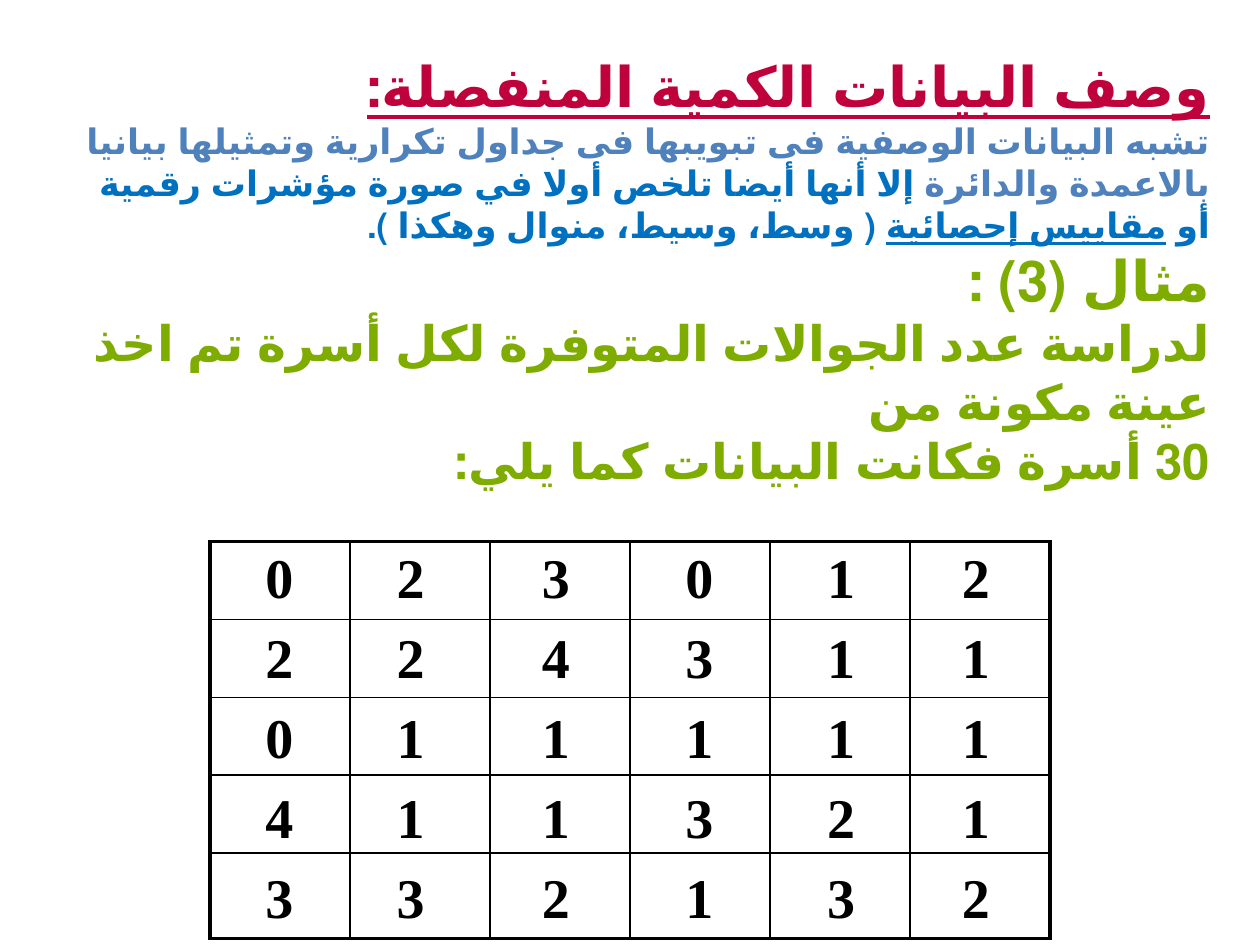
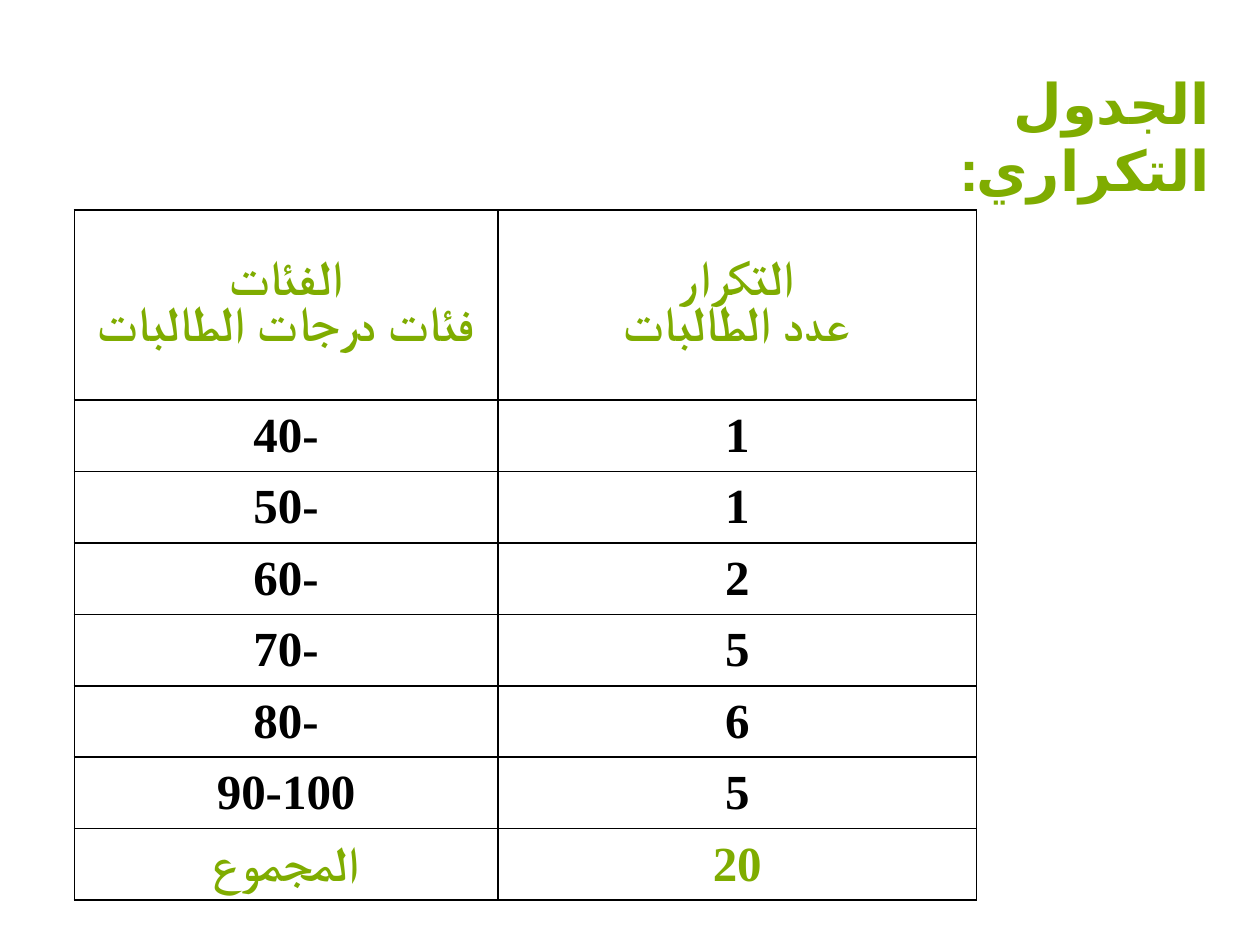
from lxml.etree import SubElement
from pptx import Presentation
from pptx.dml.color import RGBColor
from pptx.enum.lang import MSO_LANGUAGE_ID
from pptx.enum.text import MSO_ANCHOR, MSO_AUTO_SIZE, PP_ALIGN
from pptx.oxml import parse_xml
from pptx.oxml.ns import nsdecls, qn
from pptx.util import Pt

CRIMSON, SLATE, BLUE, GREEN, BLACK = "BF013C", "4F81BD", "0070C0", "7FAC00", "000000"
NO_GRID_STYLE = "{2D5ABB26-0587-4C30-8999-92F81FD0307C}"
THIN, THICK = 1, 2.25


def colour(hex_string):
    return RGBColor.from_string(hex_string)


class Deck:
    """Holds the shared style and the slide being filled."""
    text_font, table_font = "Calibri", "Times New Roman"

    def __init__(self, width, height):
        self.prs = Presentation()
        self.prs.slide_width, self.prs.slide_height = Pt(width), Pt(height)
        self.slide = None

    def new_slide(self):
        self.slide = self.prs.slides.add_slide(self.prs.slide_layouts[6])

    def set_font(self, paragraph, size, fill, name):
        font = paragraph.font
        font.size, font.bold, font.name = Pt(size), True, name
        font.language_id = MSO_LANGUAGE_ID.ARABIC
        if fill:
            font.color.rgb = colour(fill)
        for run in paragraph.runs:
            run.font.language_id = MSO_LANGUAGE_ID.ARABIC

    def arabic_text(self, left, top, width, height, paragraphs):
        """Each paragraph is (size, [(text, colour, underlined), ...])."""
        frame = self.slide.shapes.add_textbox(Pt(left), Pt(top), Pt(width), Pt(height)).text_frame
        frame.word_wrap = True
        frame.auto_size = MSO_AUTO_SIZE.SHAPE_TO_FIT_TEXT
        frame.vertical_anchor = MSO_ANCHOR.MIDDLE
        for i, (size, pieces) in enumerate(paragraphs):
            paragraph = frame.paragraphs[0] if i == 0 else frame.add_paragraph()
            paragraph.alignment = PP_ALIGN.RIGHT
            paragraph._p.get_or_add_pPr().set("rtl", "1")
            shared_fill = pieces[0][1] if len(pieces) == 1 else None
            for text, fill, underlined in pieces:
                run = paragraph.add_run()
                run.text = text
                run.font.underline = underlined
                if not shared_fill:
                    run.font.color.rgb = colour(fill)
            self.set_font(paragraph, size, shared_fill, self.text_font)

    def table(self, left, top, widths, heights):
        frame = self.slide.shapes.add_table(len(heights), len(widths), Pt(left), Pt(top),
                                            Pt(sum(widths)), Pt(sum(heights)))
        table = frame.table
        table.first_row = table.horz_banding = False
        table._tbl.tblPr.find(qn("a:tableStyleId")).text = NO_GRID_STYLE
        for column, width in zip(table.columns, widths):
            column.width = Pt(width)
        for row, height in zip(table.rows, heights):
            row.height = Pt(height)
        for cell in table.iter_cells():
            cell.fill.background()
        return table

    def borders(self, table, inner, outer):
        last_row, last_col = len(table.rows) - 1, len(table.columns) - 1
        for r in range(last_row + 1):
            for c in range(last_col + 1):
                sides = {"lnL": c == 0, "lnR": c == last_col, "lnT": r == 0, "lnB": r == last_row}
                properties = table.cell(r, c)._tc.get_or_add_tcPr()
                for i, (side, on_edge) in enumerate(sides.items()):
                    width = outer if on_edge else inner
                    properties.insert(i, parse_xml(
                        f'<a:{side} {nsdecls("a")} w="{Pt(width)}"><a:solidFill>'
                        f'<a:srgbClr val="{BLACK}"/></a:solidFill></a:{side}>'))

    def fill_cell(self, cell, text, size, fill=BLACK, spacing=None):
        cell.text = text
        cell.vertical_anchor = MSO_ANCHOR.MIDDLE
        for paragraph in cell.text_frame.paragraphs:
            paragraph.alignment = PP_ALIGN.CENTER
            if spacing:
                paragraph.line_spacing = spacing
            self.set_font(paragraph, size, fill, self.table_font)
            SubElement(paragraph.font._element, qn("a:cs"), typeface=self.table_font)


def discrete_data_slide(deck):
    deck.new_slide()
    # Heading, explanation and example
    deck.arabic_text(31, 54, 667.5, 201, [
        (32, [("وصف البيانات الكمية المنفصلة:", CRIMSON, True)]),
        (20, [("تشبه البيانات الوصفية فى تبويبها فى جداول تكرارية وتمثيلها بيانيا بالاعمدة والدائرة ",
               SLATE, False),
              ("إلا أنها أيضا تلخص أولا في صورة مؤشرات رقمية أو ", BLUE, False),
              ("مقاييس إحصائية", BLUE, True),
              (" ( وسط، وسيط، منوال وهكذا ).", BLUE, False)]),
        (32, [("مثال (3) :", GREEN, False)]),
        (28, [("لدراسة عدد الجوالات المتوفرة لكل أسرة تم اخذ عينة مكونة من", GREEN, False)]),
        (28, [("30 أسرة فكانت البيانات كما يلي:", GREEN, False)]),
    ])
    # Ruled grid behind the observations
    grid = deck.table(120, 309.5, [80] * 6, [44.5] * 4 + [48.8])
    deck.borders(grid, THIN, THICK)
    # Phones per family
    phone_counts = ["023012", "224311", "011111", "411321", "332132"]
    phones = deck.table(125.7, 308.2, [68, 82, 84, 80, 82, 72], [45.7] * 5)
    for r, counts in enumerate(phone_counts):
        for c, count in enumerate(counts):
            deck.fill_cell(phones.cell(r, c), count, 32)


def frequency_slide(deck):
    deck.new_slide()
    # Title
    deck.arabic_text(503.5, 54.5, 195, 45.5, [(32, [("الجدول التكراري:", GREEN, False)])])
    # Grade classes and their frequencies
    frequencies = [
        ("الفئات\nفئات درجات الطالبات", "التكرار\nعدد الطالبات"),
        ("40-", "1"), ("50-", "1"), ("60-", "2"), ("70-", "5"), ("80-", "6"), ("90-100", "5"),
        ("المجموع", "20"),
    ]
    last = len(frequencies) - 1
    grades = deck.table(42.5, 120, [242, 273.6], [108.5] + [40.85] * last)
    deck.borders(grades, THIN, THIN)
    for r, row in enumerate(frequencies):
        for c, text in enumerate(row):
            deck.fill_cell(grades.cell(r, c), text, 28, GREEN if r in (0, last) else BLACK,
                           0.85 if r == 0 else None)


def main():
    deck = Deck(720, 540)
    discrete_data_slide(deck)
    frequency_slide(deck)
    deck.prs.save("out.pptx")


if __name__ == "__main__":
    main()
